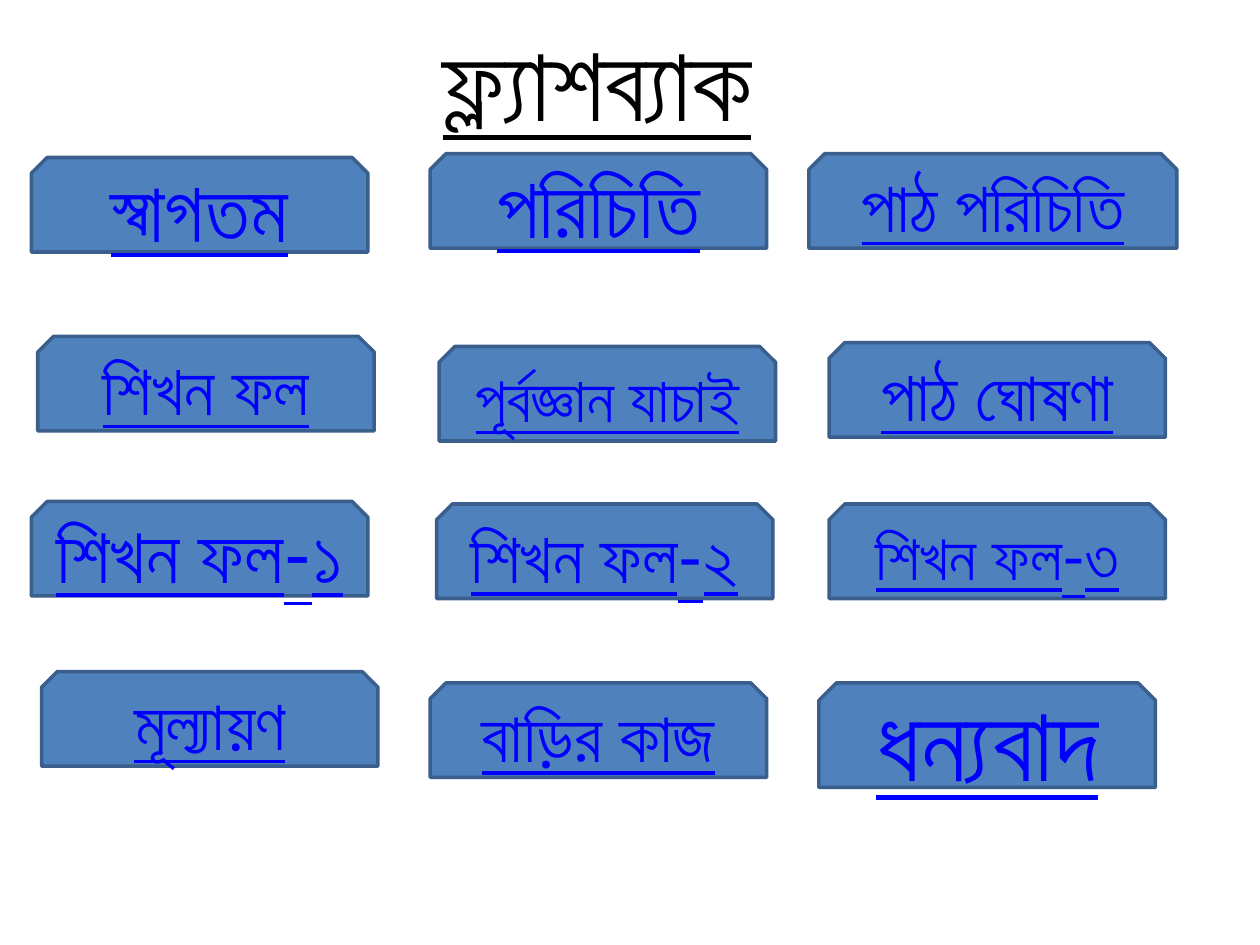
import pptx
import pptx.util
import pptx.dml.color
import pptx.enum.shapes
import pptx.enum.text

Inches = pptx.util.Inches
RGBColor = pptx.dml.color.RGBColor
ALIGN = pptx.enum.text.PP_ALIGN
ANCHOR = pptx.enum.text.MSO_ANCHOR

BLUE = RGBColor(0x4F, 0x81, 0xBD)
DARK_BLUE = RGBColor(0x3A, 0x5F, 0x8C)
LINK_BLUE = RGBColor(0x00, 0x00, 0xFF)
BLACK = RGBColor(0x00, 0x00, 0x00)
FONT = "Lato"

# Button grid, in inches
GRID_LEFT, COLUMN_PITCH = 0.25, 3.165
ROW_TOPS = (1.22, 2.67, 4.0, 5.42)
BUTTON_WIDTH, BUTTON_HEIGHT = 2.67, 0.75

# One row of buttons per line: label, text size, (shift right, shift down)
BUTTONS = (
    (("স্বাগতম", 48, (0, 0.03)), ("পরিচিতি", 48, (0, 0)),
     ("পাঠ পরিচিতি", 40, (-0.16, 0))),
    (("শিখন ফল", 40, (0.05, 0)), ("পূর্বজ্ঞান যাচাই", 36, (0.07, 0.08)),
     ("পাঠ ঘোষণা", 40, (0, 0.05))),
    (("শিখন ফল-১", 44, (0, -0.02)), ("শিখন ফল-২", 40, (0.05, 0)),
     ("শিখন ফল-৩", 36, (0, 0))),
    (("মূল্যায়ণ", 40, (0.08, -0.09)), ("বাড়ির কাজ", 40, (0, 0)),
     ("ধন্যবাদ", 60, (-0.08, 0))),
)
# Buttons that differ from the common size
SPECIAL_SIZES = {"পাঠ পরিচিতি": (2.92, 0.75), "ধন্যবাদ": (2.67, 0.83)}


def write_text(shape, text, size, color, align, anchor):
    frame = shape.text_frame
    frame.text = text
    frame.word_wrap = True
    frame.vertical_anchor = anchor
    para = frame.paragraphs[0]
    para.alignment = align
    font = para.runs[0].font
    font.name = FONT
    font.size = pptx.util.Pt(size)
    font.underline = True
    font.color.rgb = color


def place_title(page, left, top, width, height):
    title = page.shapes.title
    title.left, title.top = Inches(left), Inches(top)
    title.width, title.height = Inches(width), Inches(height)
    write_text(title, "ফ্ল্যাশব্যাক", 60, BLACK, ALIGN.LEFT, ANCHOR.TOP)
    title.text_frame.auto_size = pptx.enum.text.MSO_AUTO_SIZE.SHAPE_TO_FIT_TEXT


def add_button(page, box, label, size):
    button = page.shapes.add_shape(
        pptx.enum.shapes.MSO_SHAPE.SNIP_2_SAME_RECTANGLE,
        *(Inches(length) for length in box))
    button.shadow.inherit = False
    button.fill.solid()
    button.fill.fore_color.rgb = BLUE
    button.line.color.rgb = DARK_BLUE
    button.line.width = pptx.util.Pt(2)
    write_text(button, label, size, LINK_BLUE, ALIGN.CENTER, ANCHOR.MIDDLE)


def add_menu(page, left):
    for top, row in zip(ROW_TOPS, BUTTONS):
        for column, (label, size, (right, down)) in enumerate(row):
            width, height = SPECIAL_SIZES.get(label, (BUTTON_WIDTH, BUTTON_HEIGHT))
            box = (left + column * COLUMN_PITCH + right, top + down, width, height)
            add_button(page, box, label, size)


def main():
    deck = pptx.Presentation()
    deck.slide_width, deck.slide_height = Inches(10), Inches(7.5)
    page = deck.slides.add_slide(deck.slide_layouts[5])  # title only

    # Heading
    place_title(page, GRID_LEFT + COLUMN_PITCH, 0.08, 2.92, 1.11)
    # Menu of lesson sections
    add_menu(page, GRID_LEFT)

    deck.save("out.pptx")


if __name__ == "__main__":
    main()
